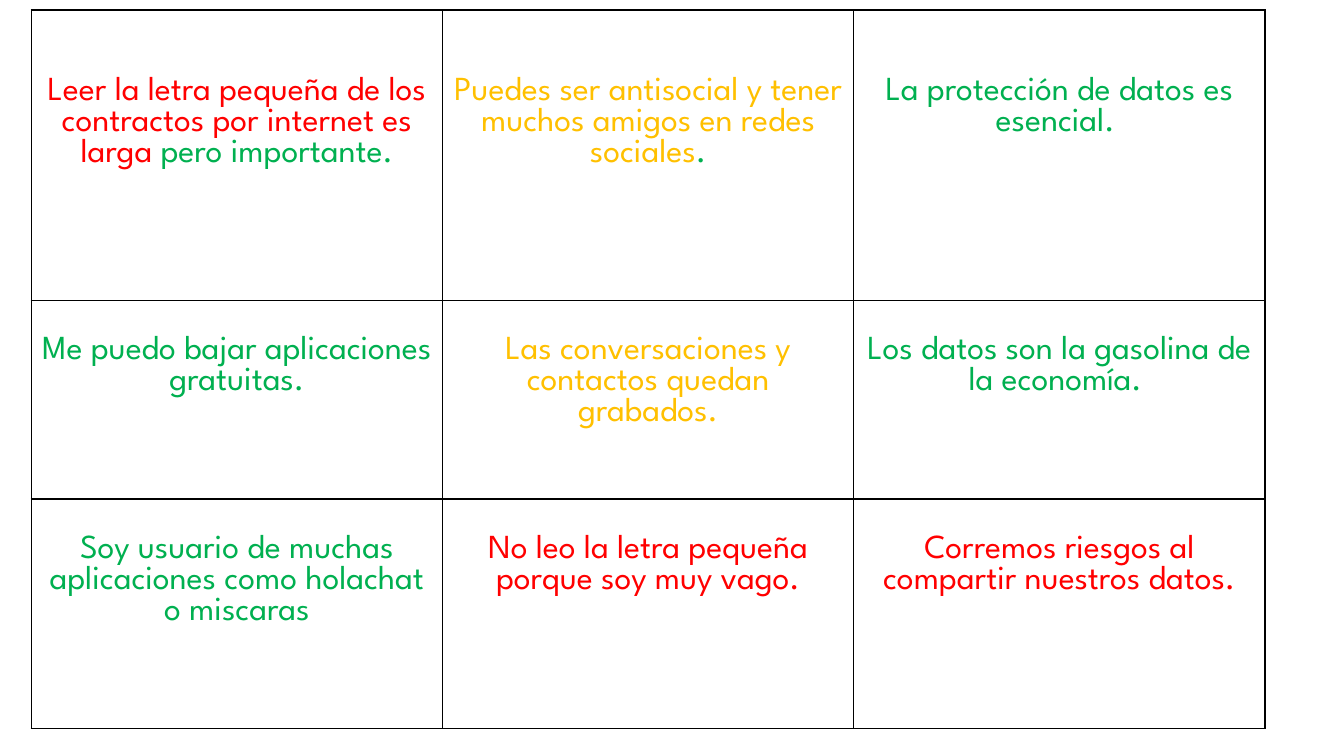
from dataclasses import dataclass

import lxml.etree
import pptx
import pptx.dml.color
import pptx.enum.text
import pptx.oxml.ns
import pptx.table
import pptx.util

Pt = pptx.util.Pt


@dataclass(frozen=True)
class Theme:
    font: str = "League Spartan"
    size: float = 24
    line_height: float = 22.08
    margin_top: float = 3.6
    border_width: float = 1
    border: str = "000000"
    background: str = "FFFFFF"
    red: str = "FF0000"
    amber: str = "FFC000"
    green: str = "00B050"


@dataclass(frozen=True)
class Phrase:
    wording: str
    color: str


@dataclass(frozen=True)
class OpinionRow:
    height: float
    lines_above: int
    opinions: list[list[Phrase]]


THEME = Theme()
LEFT, TOP, COLUMN_WIDTH = 22.3, 7.2, 293.76

OPINION_ROWS = [
    OpinionRow(207.4, 2, [
        [Phrase("Leer la letra pequeña de los contractos por internet es larga", THEME.red),
         Phrase(" pero importante.", THEME.green)],
        [Phrase("Puedes ser antisocial y tener muchos amigos en redes sociales", THEME.amber),
         Phrase(".", THEME.green)],
        [Phrase("La protección de datos es esencial. ", THEME.green)],
    ]),
    OpinionRow(141.8, 1, [
        [Phrase("Me puedo bajar aplicaciones gratuitas.", THEME.green)],
        [Phrase("Las conversaciones y contactos quedan grabados.", THEME.amber)],
        [Phrase("Los datos son la gasolina de la economía. ", THEME.green)],
    ]),
    OpinionRow(164.2, 1, [
        [Phrase("Soy usuario de muchas aplicaciones como holachat o miscaras", THEME.green)],
        [Phrase("No leo la letra pequeña porque soy muy vago.", THEME.red)],
        [Phrase("Corremos riesgos al compartir nuestros datos.", THEME.red)],
    ]),
]


def rgb(color: str) -> pptx.dml.color.RGBColor:
    return pptx.dml.color.RGBColor.from_string(color)


def draw_borders(cell: pptx.table._Cell) -> None:
    qn = pptx.oxml.ns.qn
    properties = cell._tc.get_or_add_tcPr()
    for side in ("a:lnL", "a:lnR", "a:lnT", "a:lnB"):
        border = lxml.etree.SubElement(properties, qn(side), w=str(Pt(THEME.border_width)))
        paint = lxml.etree.SubElement(border, qn("a:solidFill"))
        lxml.etree.SubElement(paint, qn("a:srgbClr"), val=THEME.border)


def write_opinion(cell: pptx.table._Cell, phrases: list[Phrase], lines_above: int) -> None:
    draw_borders(cell)
    cell.fill.solid()
    cell.fill.fore_color.rgb = rgb(THEME.background)
    cell.margin_top = Pt(THEME.margin_top + lines_above * THEME.line_height)
    sentence = cell.text_frame.paragraphs[0]
    sentence.alignment = pptx.enum.text.PP_ALIGN.CENTER
    for phrase in phrases:
        run = sentence.add_run()
        run.text = phrase.wording
        run.font.name = THEME.font
        run.font.size = Pt(THEME.size)
        run.font.bold = False
        run.font.color.rgb = rgb(phrase.color)


def main() -> None:
    presentation = pptx.Presentation()
    presentation.slide_width, presentation.slide_height = Pt(960), Pt(540)
    slide = presentation.slides.add_slide(presentation.slide_layouts[6])
    column_count = len(OPINION_ROWS[0].opinions)
    opinions = slide.shapes.add_table(
        len(OPINION_ROWS), column_count, Pt(LEFT), Pt(TOP),
        Pt(COLUMN_WIDTH * column_count), Pt(sum(row.height for row in OPINION_ROWS)),
    ).table
    opinions.first_row = False
    opinions.horz_banding = False
    for row_index, row in enumerate(OPINION_ROWS):
        opinions.rows[row_index].height = Pt(row.height)
        for column_index, phrases in enumerate(row.opinions):
            write_opinion(opinions.cell(row_index, column_index), phrases, row.lines_above)
    presentation.save("out.pptx")


if __name__ == "__main__":
    main()
